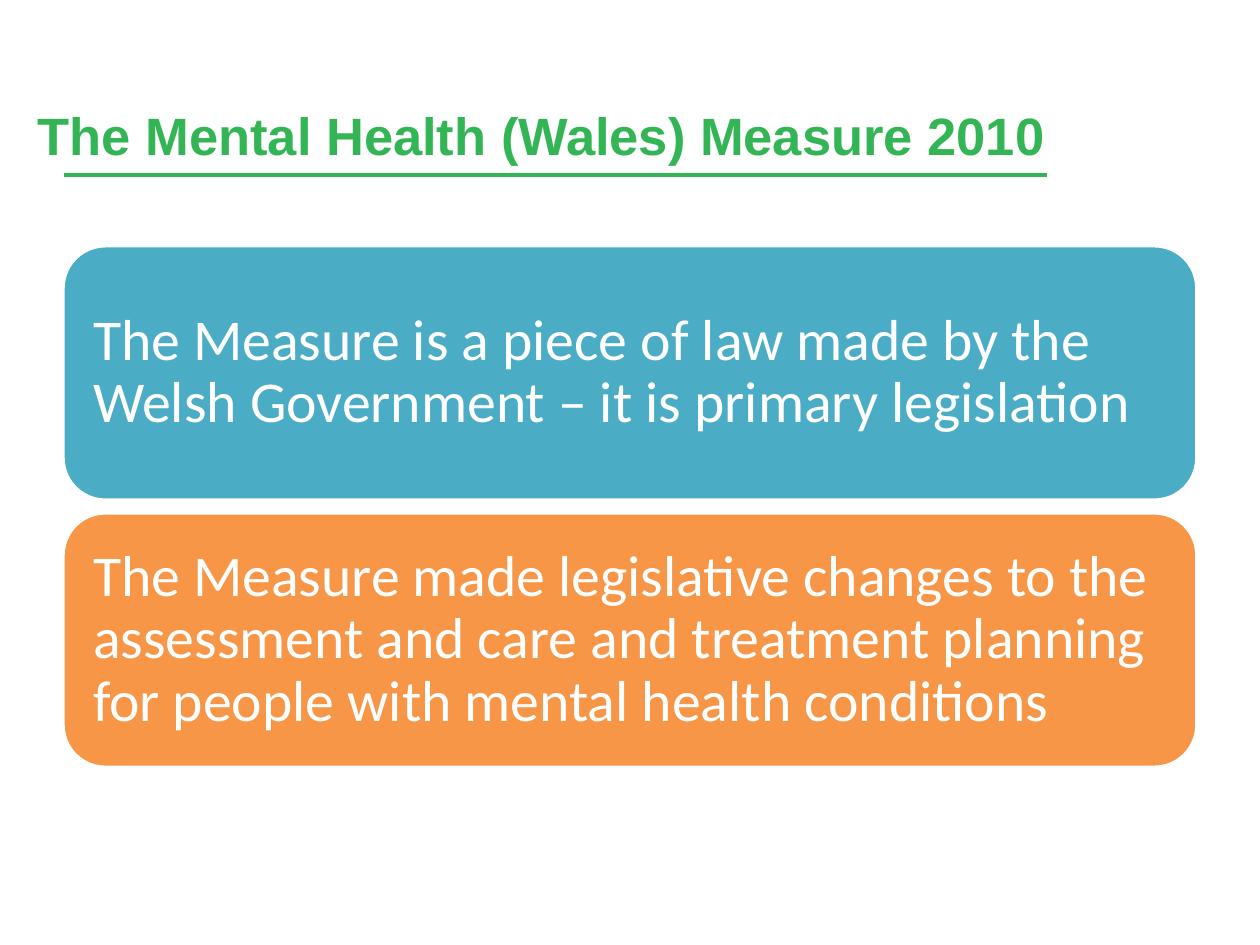
from lxml import etree
from pptx import Presentation
from pptx.dml.color import RGBColor
from pptx.enum.shapes import MSO_CONNECTOR, MSO_SHAPE
from pptx.enum.text import MSO_ANCHOR, PP_ALIGN
from pptx.oxml.ns import qn
from pptx.util import Inches, Pt

STRAIGHT = MSO_CONNECTOR.STRAIGHT
ROUNDED = MSO_SHAPE.ROUNDED_RECTANGLE
MIDDLE, BOTTOM = MSO_ANCHOR.MIDDLE, MSO_ANCHOR.BOTTOM
LEFT = PP_ALIGN.LEFT

GREEN = RGBColor(0x34, 0xB5, 0x55)
TEAL = RGBColor(0x4B, 0xAC, 0xC6)
ORANGE = RGBColor(0xF7, 0x96, 0x46)
WHITE = RGBColor(0xFF, 0xFF, 0xFF)

HEADING = "The Mental Health (Wales) Measure 2010"
STATEMENTS = [
    ("The Measure is a piece of law made by the Welsh Government "
     "– it is primary legislation", TEAL),
    ("The Measure made legislative changes to the assessment and care and "
     "treatment planning for people with mental health conditions", ORANGE),
]


def style_text(frame, text, font_name, size, color, anchor):
    frame.word_wrap = True
    frame.vertical_anchor = anchor
    frame.text = text
    paragraph = frame.paragraphs[0]
    paragraph.alignment = LEFT
    font = paragraph.font
    font.name, font.size, font.color.rgb = font_name, Pt(size), color
    return paragraph


def add_heading(slide, left, top, width, height):
    """Title with a rule just below its box."""
    title = slide.shapes.title
    title.left, title.top = Inches(left), Inches(top)
    title.width, title.height = Inches(width), Inches(height)
    style_text(title.text_frame, HEADING, "Arial", 30, GREEN,
               BOTTOM).font.bold = True

    rule_left, rule_y = Inches(left + 0.31), Inches(top + height + 0.02)
    rule = slide.shapes.add_connector(
        STRAIGHT, rule_left, rule_y, rule_left + Inches(7.8), rule_y)
    rule.line.color.rgb = GREEN
    rule.line.width = Pt(2)
    etree.SubElement(rule._element.spPr, qn("a:effectLst"))


def add_statements(slide, left, top, width, height, gap=0.1):
    """Equal rounded panels stacked to fill the box."""
    panel_height = (height - gap * (len(STATEMENTS) - 1)) / len(STATEMENTS)
    for row, (text, color) in enumerate(STATEMENTS):
        panel = slide.shapes.add_shape(
            ROUNDED, Inches(left), Inches(top + row * (panel_height + gap)),
            Inches(width), Inches(panel_height))
        panel.shadow.inherit = False
        panel.fill.solid()
        panel.fill.fore_color.rgb = color
        panel.line.color.rgb = WHITE
        panel.line.width = Pt(2)
        frame = panel.text_frame
        frame.margin_left = frame.margin_right = Inches(0.14)
        frame.margin_top = frame.margin_bottom = Inches(0.14)
        style_text(frame, text, "Calibri", 33, WHITE, MIDDLE).line_spacing = 0.9


def main():
    prs = Presentation()
    prs.slide_width, prs.slide_height = Inches(10), Inches(7.5)
    slide = prs.slides.add_slide(prs.slide_layouts[5])  # title only
    add_heading(slide, 0.2, 0.28, 10.08, 1.09)
    add_statements(slide, 0.5, 1.95, 9, 4.14)
    prs.save("out.pptx")


if __name__ == "__main__":
    main()
